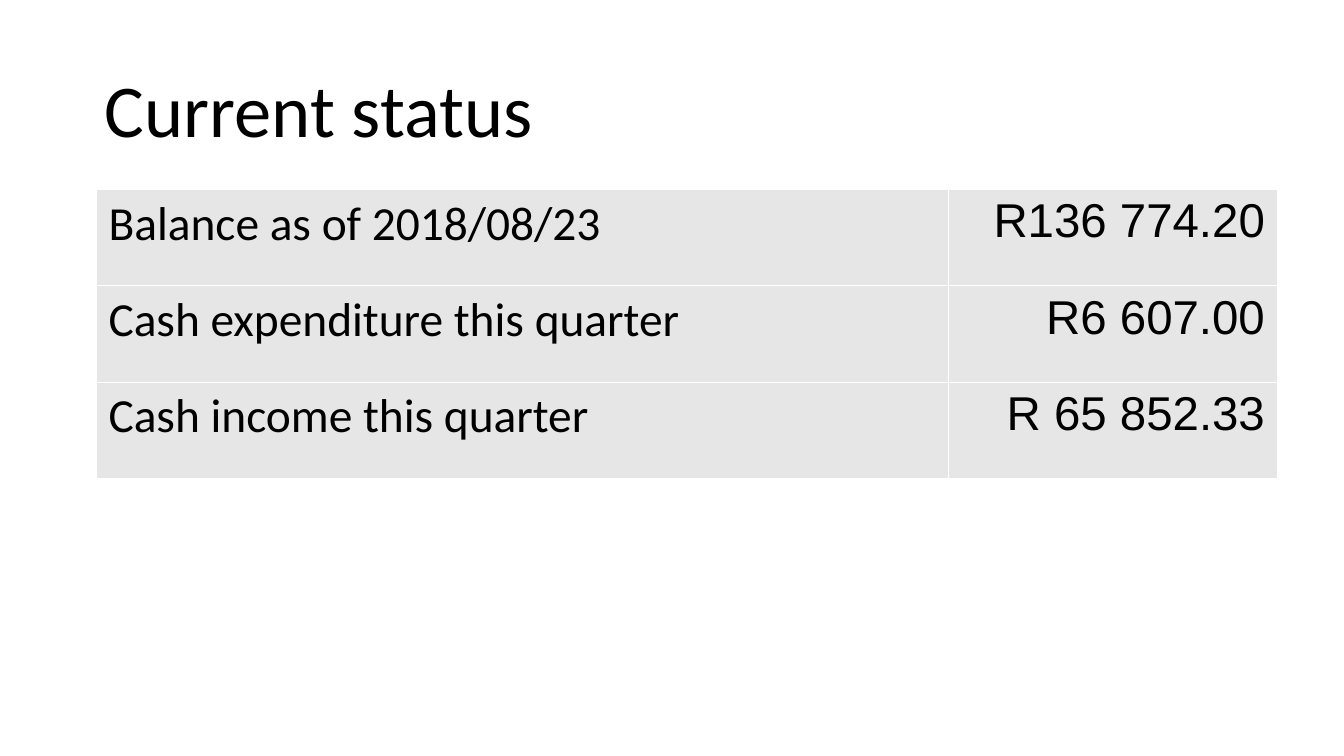
"""Build the current status slide with its table of cash figures."""
from lxml.etree import SubElement
from pptx import Presentation
from pptx.dml.color import RGBColor
from pptx.enum.text import MSO_ANCHOR, PP_ALIGN
from pptx.oxml.ns import qn
from pptx.util import Inches, Pt

BLACK, WHITE, GREY = "000000", "FFFFFF", "E6E6E6"
COLUMNS = [
    {"width": 6.98, "font": "Calibri", "align": PP_ALIGN.LEFT},
    {"width": 2.7, "font": "Arial", "align": PP_ALIGN.RIGHT},
]
ROW_HEIGHT = 0.79
FIGURES = [
    ("Balance as of 2018/08/23", "R136 774.20"),
    ("Cash expenditure this quarter", "R6 607.00"),
    ("Cash income this quarter", "R 65 852.33"),
]


def color(value):
    return RGBColor.from_string(value)


def format_text(paragraph, font, size, align):
    paragraph.alignment = align
    for name, value in {"name": font, "size": Pt(size), "bold": False}.items():
        setattr(paragraph.runs[0].font, name, value)
    paragraph.runs[0].font.color.rgb = color(BLACK)


deck = Presentation()
deck.slide_width, deck.slide_height = Inches(11.02), Inches(6.2)
slide = deck.slides.add_slide(deck.slide_layouts[5])
slide.background.fill.solid()
slide.background.fill.fore_color.rgb = color(WHITE)

heading = slide.shapes.title
place = {"left": 0.76, "top": 0.33, "width": 9.51, "height": 1.2}
for name, value in place.items():
    setattr(heading, name, Inches(value))
heading.text_frame.text = "Current status"
heading.text_frame.vertical_anchor = MSO_ANCHOR.MIDDLE
heading.text_frame.paragraphs[0].line_spacing = 0.9
format_text(heading.text_frame.paragraphs[0], "Calibri", 44, PP_ALIGN.LEFT)

status = slide.shapes.add_table(
    len(FIGURES), len(COLUMNS), Inches(0.79), Inches(1.55),
    Inches(sum(column["width"] for column in COLUMNS)),
    Inches(ROW_HEIGHT * len(FIGURES)),
).table
status.first_row = status.horz_banding = False
for index, column in enumerate(COLUMNS):
    status.columns[index].width = Inches(column["width"])

for row, figures in enumerate(FIGURES):
    status.rows[row].height = Inches(ROW_HEIGHT)
    for index, (wording, column) in enumerate(zip(figures, COLUMNS)):
        cell = status.cell(row, index)
        cell.text = wording
        format_text(cell.text_frame.paragraphs[0], column["font"], 28, column["align"])
        properties = cell._tc.get_or_add_tcPr()
        for side in ("a:lnL", "a:lnR", "a:lnT", "a:lnB"):
            border = SubElement(properties, qn(side), w=str(Pt(0.06)))
            paint = SubElement(border, qn("a:solidFill"))
            SubElement(paint, qn("a:srgbClr"), val=WHITE)
        cell.fill.solid()
        cell.fill.fore_color.rgb = color(GREY)

deck.save("out.pptx")
